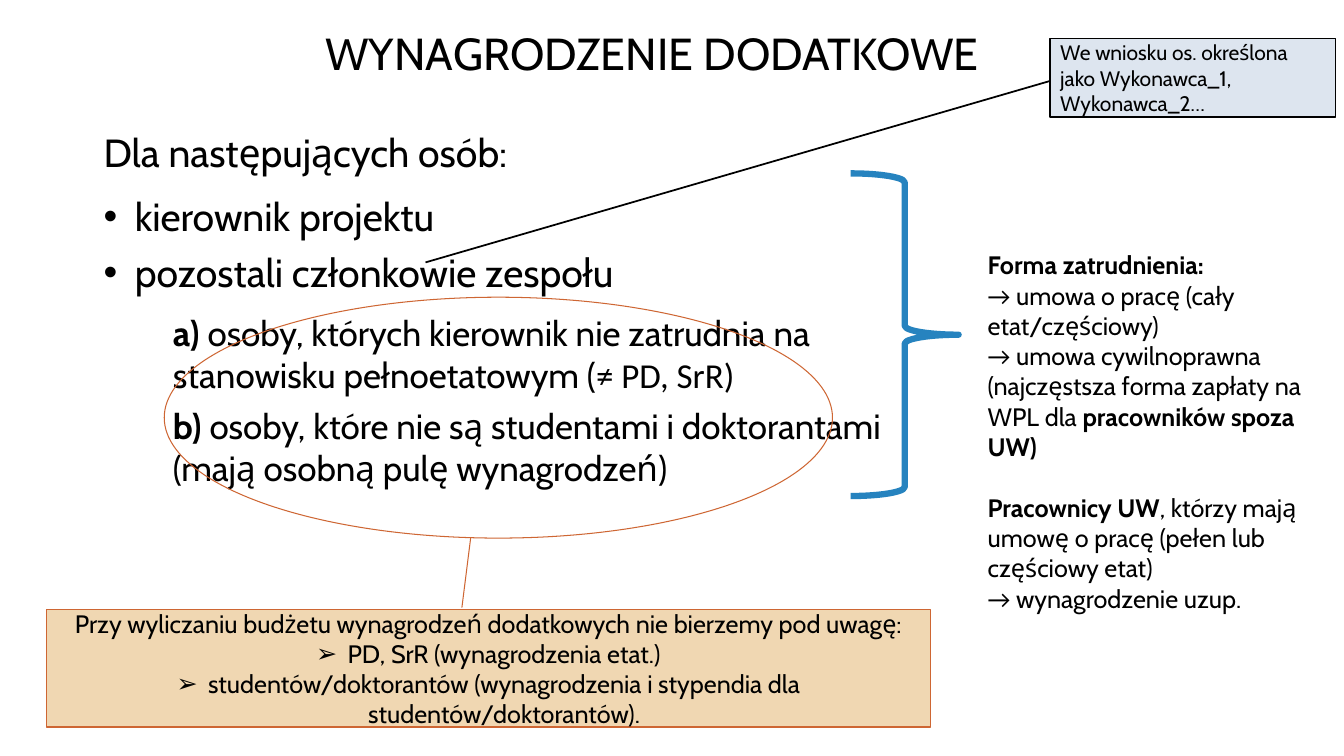
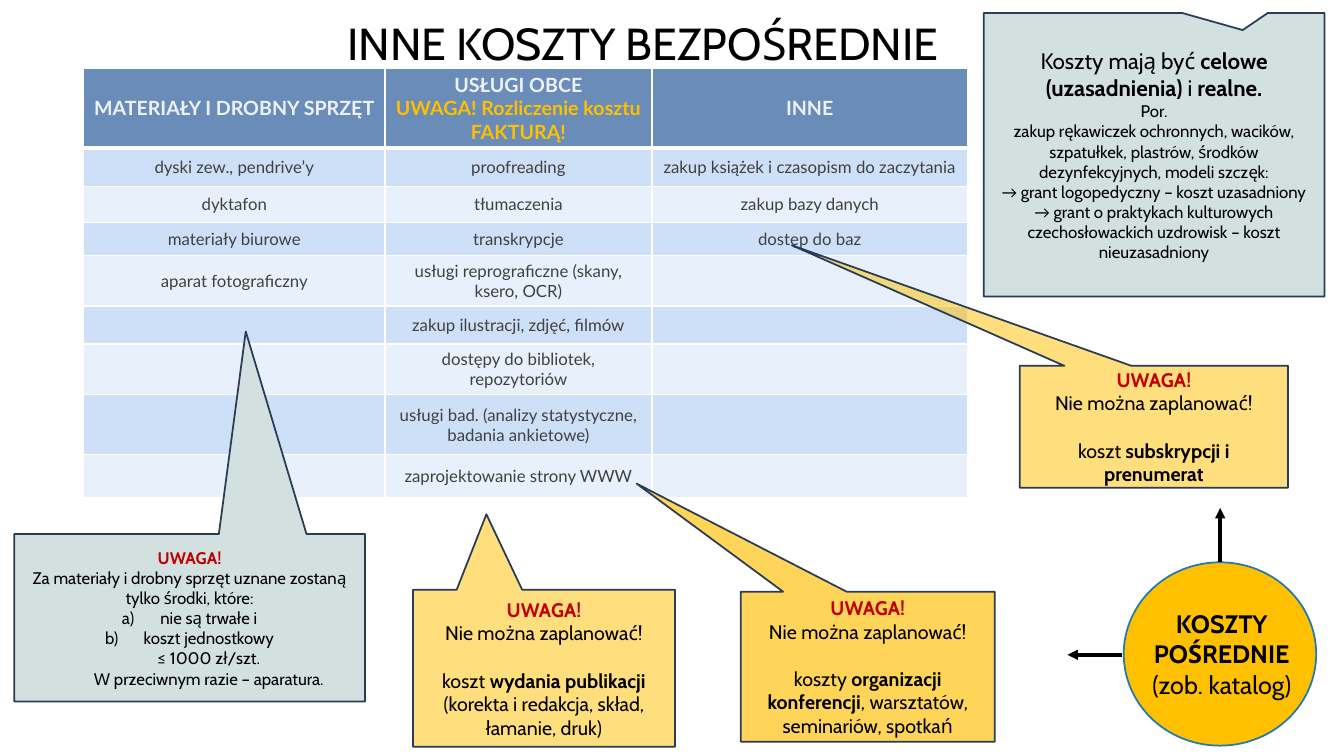
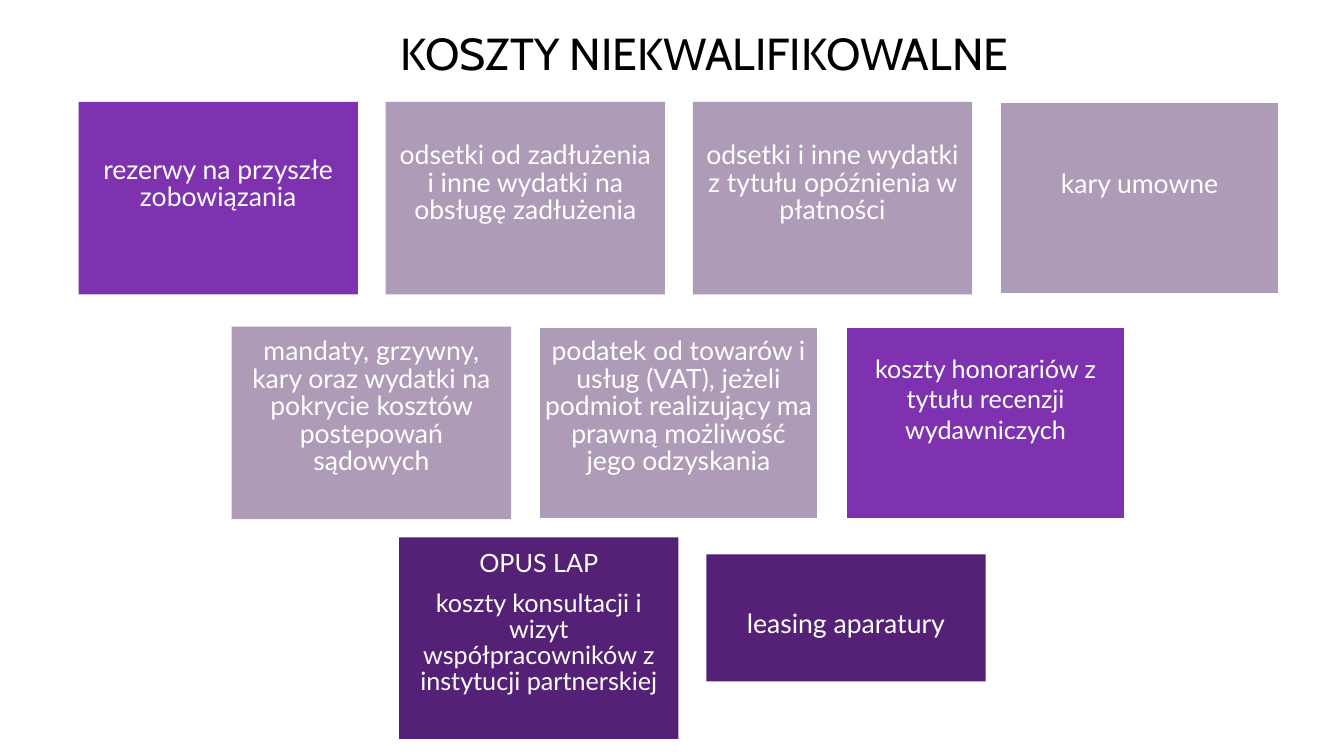
from dataclasses import dataclass

from lxml import etree
from pptx import Presentation
from pptx.dml.color import RGBColor
from pptx.enum.shapes import MSO_CONNECTOR, MSO_SHAPE
from pptx.enum.text import MSO_ANCHOR, PP_ALIGN
from pptx.oxml.ns import qn
from pptx.util import Cm, Pt

LEFT, CENTER = PP_ALIGN.LEFT, PP_ALIGN.CENTER
TOP, MIDDLE = MSO_ANCHOR.TOP, MSO_ANCHOR.MIDDLE
RECT, ELLIPSE, BRACE = MSO_SHAPE.RECTANGLE, MSO_SHAPE.OVAL, MSO_SHAPE.RIGHT_BRACE
LINE_CALLOUT, WEDGE = MSO_SHAPE.LINE_CALLOUT_1, MSO_SHAPE.RECTANGULAR_CALLOUT
STRAIGHT = MSO_CONNECTOR.STRAIGHT


@dataclass(frozen=True)
class Theme:
    body_font: str = "Cabin"
    table_font: str = "Lato"
    symbol_font: str = "Calibri"
    black: str = "000000"
    white: str = "FFFFFF"
    red: str = "C00000"
    gold: str = "FFC000"
    blue: str = "2683BF"
    rust: str = "CE6633"
    sand: str = "F0D7B2"
    ice: str = "DDE5EF"
    mist: str = "D2E0E0"
    navy: str = "283C55"
    circle_line: str = "2379B0"
    header: str = "698CB8"
    header_text: str = "EEF2F7"
    cell_text: str = "404040"
    bands: tuple = ("CDE0F8", "E8F0FC")
    violet: str = "7E32B0"
    lilac: str = "AD9BB7"
    plum: str = "542176"
    title: float = 32
    lead: float = 28
    sub: float = 25
    tile: float = 19
    text: float = 18
    tag: float = 15
    note: float = 14
    small: float = 12


THEME = Theme()


@dataclass
class Para:
    """Runs are plain strings or (text, flags); flags: bold, symbol, red, gold."""
    runs: list
    size: float = THEME.text
    align: object = LEFT
    color: str = THEME.black
    font: str = THEME.body_font
    before: float = 0
    after: float = 0
    spacing: float = 1
    indent: float = 0
    bullet: str = ""


# ---- Content: extra pay ----
PEOPLE = [
    Para(["Dla następujących osób:"], THEME.lead, after=12),
    Para(["kierownik projektu"], THEME.lead, indent=0.79, bullet="•"),
    Para(["pozostali członkowie zespołu"], THEME.lead, before=6, after=12,
         indent=0.79, bullet="•"),
    Para([("a) ", "bold"), "osoby, których kierownik nie zatrudnia na\n"
          "stanowisku pełnoetatowym (", ("≠ PD, SrR)", "symbol")],
         THEME.sub, indent=1.75),
    Para([("b) ", "bold"), "osoby, które nie są studentami i doktorantami\n"
          "(mają osobną pulę wynagrodzeń)"], THEME.sub, before=6, indent=1.75),
]
EMPLOYMENT = [
    Para([("Forma zatrudnienia:", "bold")]),
    Para([("→ ", "symbol"), "umowa o pracę (cały etat/częściowy)"]),
    Para([("→", "symbol"), " umowa cywilnoprawna\n(najczęstsza forma zapłaty na WPL dla ",
          ("pracowników spoza UW)", "bold")]),
    Para([("Pracownicy UW", "bold"),
          ", którzy mają umowę o pracę (pełen lub częściowy etat)"], before=22),
    Para([("→", "symbol"), " wynagrodzenie uzup."]),
]
CONTRACTORS = [Para(["We wniosku os. określona jako Wykonawca_1, Wykonawca_2…"], THEME.tag)]
EXCLUDED = [
    Para(["Przy wyliczaniu budżetu wynagrodzeń dodatkowych nie bierzemy pod uwagę:"],
         align=CENTER),
    Para(["PD, SrR (wynagrodzenia etat.)"], align=CENTER, indent=0.79, bullet="➢"),
    Para(["studentów/doktorantów (wynagrodzenia i stypendia dla studentów/doktorantów)."],
         align=CENTER, indent=0.79, bullet="➢"),
]

# ---- Content: other direct costs ----
HEADERS = [
    [["MATERIAŁY I DROBNY SPRZĘT"]],
    [["USŁUGI OBCE"], [("UWAGA! Rozliczenie kosztu FAKTURĄ!", "gold")]],
    [["INNE"]],
]
COST_ROWS = [
    ("dyski zew., pendrive’y", "proofreading", "zakup książek i czasopism do zaczytania"),
    ("dyktafon", "tłumaczenia", "zakup bazy danych"),
    ("materiały biurowe", "transkrypcje", "dostęp do baz"),
    ("aparat fotograficzny", "usługi reprograficzne (skany, ksero, OCR)", ""),
    ("", "zakup ilustracji, zdjęć, filmów", ""),
    ("", "dostępy do bibliotek, repozytoriów", ""),
    ("", "usługi bad. (analizy statystyczne, badania ankietowe)", ""),
    ("", "zaprojektowanie strony WWW", ""),
]
COLUMN_WIDTHS = (7.59, 6.73, 7.95)
ROW_HEIGHTS = (2.0, 0.96, 0.91, 0.84, 1.27, 0.96, 1.27, 1.52, 1.09)


def warning(size, *paras):
    return [Para([("UWAGA!", "bold red")], size, CENTER), *paras]


def not_plannable(*runs):
    return warning(THEME.note, Para(["Nie można zaplanować!"], THEME.note, CENTER),
                   Para(list(runs), THEME.note, CENTER, before=17))


EQUIPMENT = warning(
    THEME.small,
    Para(["Za materiały i drobny sprzęt uznane zostaną tylko środki, które:"],
         THEME.small, CENTER),
    Para(["nie są trwałe i"], THEME.small, CENTER, indent=0.97, bullet="a)"),
    Para(["koszt jednostkowy\n", ("≤ ", "symbol"),
          "1000 zł/szt.\nW przeciwnym razie – aparatura."],
         THEME.small, CENTER, indent=0.97, bullet="a)"),
)
PURPOSE = [
    Para(["Koszty mają być ", ("celowe (uzasadnienia)", "bold"), " i ", ("realne.", "bold")],
         16, CENTER),
    Para(["Por."], THEME.small, CENTER),
    Para(["zakup rękawiczek ochronnych, wacików, szpatułkek, plastrów, "
          "środków dezynfekcyjnych, modeli szczęk:"], THEME.small, CENTER),
    Para([("→ ", "symbol"), "grant logopedyczny – koszt uzasadniony"], THEME.small, CENTER),
    Para([("→ ", "symbol"), "grant o praktykach kulturowych czechosłowackich uzdrowisk"
          " – koszt nieuzasadniony"], THEME.small, CENTER),
]
# place, pointer, fill, opacity in percent, text
NOTES = [
    ((25.7, 9.22, 6.76, 3.07), (-1.35, -1.49), THEME.gold, 51,
     not_plannable("koszt ", ("subskrypcji i prenumerat", "bold"))),
    ((0.36, 13.46, 8.84, 4.22), (0.16, -1.71), THEME.mist, 100, EQUIPMENT),
    ((18.67, 14.91, 6.4, 3.78), (-0.91, -1.22), THEME.gold, 65,
     not_plannable("koszty ", ("organizacji konferencji", "bold"),
                   ", warsztatów, seminariów, spotkań")),
    ((10.41, 14.86, 6.6, 3.96), (-0.22, -0.98), THEME.gold, 51,
     not_plannable("koszt ", ("wydania publikacji ", "bold"),
                   "(korekta i redakcja, skład, łamanie, druk)")),
    ((24.79, 0.33, 8.59, 7.14), (0.26, -0.44), THEME.mist, 100, PURPOSE),
]
INDIRECT = [Para([("KOSZTY POŚREDNIE ", "bold"), "(zob. katalog)"], align=CENTER)]
INDIRECT_ARROWS = [((30.75, 14.15), (30.75, 12.8)), ((28.27, 16.5), (26.9, 16.5))]


# ---- Content: ineligible costs ----
@dataclass
class Tile:
    lines: list
    fill: str
    pad_top: float
    pad_side: float = 0.25
    outlined: bool = False
    size: float = THEME.tile
    spacing: float = 0.86
    drop: float = 0
    height: float = 4.85


TILE_WIDTH, TILE_PITCH = 7.04, 7.74
# left and top of the row, tiles
TILE_ROWS = [
    (1.98, 2.57, [
        Tile(["rezerwy na przyszłe zobowiązania"], THEME.violet, 1.39),
        Tile(["odsetki od zadłużenia i inne wydatki na obsługę zadłużenia"], THEME.lilac, 1.03),
        Tile(["odsetki i inne wydatki z tytułu opóźnienia w płatności"], THEME.lilac, 1.03),
        Tile(["kary umowne"], THEME.lilac, 1.76, outlined=True),
    ]),
    (5.84, 8.23, [
        Tile(["mandaty, grzywny, kary oraz wydatki na pokrycie kosztów postepowań sądowych"],
             THEME.lilac, 0.31, 0.4),
        Tile(["podatek od towarów i usług (VAT), jeżeli podmiot realizujący "
              "ma prawną możliwość jego odzyskania"], THEME.lilac, 0.31, 0.15, True),
        Tile(["koszty honorariów z tytułu recenzji wydawniczych"], THEME.violet, 0.68,
             outlined=True, size=THEME.text, spacing=1),
    ]),
    (10.06, 13.54, [
        Tile(["OPUS LAP",
              "koszty konsultacji i wizyt współpracowników z instytucji partnerskiej"],
             THEME.plum, 0.36, 0.4, size=THEME.text, height=5.08),
        Tile(["leasing aparatury"], THEME.plum, 1.45, drop=0.43, height=3.2),
    ]),
]


# ---- Text ----
def rgb(value):
    return RGBColor.from_string(value)


def add_bullet(para, mark):
    props = para._p.get_or_add_pPr()
    if mark == "a)":
        etree.SubElement(props, qn("a:buAutoNum"), type="alphaLcParenR")
    else:
        etree.SubElement(props, qn("a:buFont"), typeface="Arial")
        etree.SubElement(props, qn("a:buChar"), char=mark)


def add_span(para, item, run):
    text, flags = (run, "") if isinstance(run, str) else run
    for number, line in enumerate(text.split("\n")):
        if number:
            para.add_line_break()
        if not line:
            continue
        span = para.add_run()
        span.text = line
        span.font.size = Pt(item.size)
        span.font.name = THEME.symbol_font if "symbol" in flags else item.font
        span.font.bold = "bold" in flags
        color = THEME.red if "red" in flags else THEME.gold if "gold" in flags else item.color
        span.font.color.rgb = rgb(color)


def write(frame, items):
    frame.word_wrap = True
    for number, item in enumerate(items):
        para = frame.add_paragraph() if number else frame.paragraphs[0]
        if item.indent:
            props = para._p.get_or_add_pPr()
            props.set("marL", str(Cm(item.indent)))
            props.set("indent", str(-Cm(item.indent) if item.bullet else 0))
        if item.bullet:
            add_bullet(para, item.bullet)
        para.alignment = item.align
        para.line_spacing = item.spacing
        if item.before:
            para.space_before = Pt(item.before)
        if item.after:
            para.space_after = Pt(item.after)
        for run in item.runs:
            add_span(para, item, run)


# ---- Objects ----
def add_text(page, place, items, anchor=TOP):
    box = page.shapes.add_textbox(*map(Cm, place))
    box.text_frame.vertical_anchor = anchor
    write(box.text_frame, items)


def add_title(page, text, center, top=0.38):
    width = 26
    add_text(page, (center - width / 2, top, width, 1.88),
             [Para([text], THEME.title, CENTER)], MIDDLE)


def add_figure(page, kind, place, fill=None, line=None, items=(), adjust=(), opacity=100):
    """line is (colour, width in points)."""
    figure = page.shapes.add_shape(kind, *map(Cm, place))
    figure.shadow.inherit = False
    for number, value in enumerate(adjust):
        figure.adjustments[number] = value
    if fill:
        figure.fill.solid()
        figure.fill.fore_color.rgb = rgb(fill)
        if opacity < 100:
            color = figure.fill._xPr.find(qn("a:solidFill"))[0]
            etree.SubElement(color, qn("a:alpha"), val=str(opacity * 1000))
    else:
        figure.fill.background()
    if line:
        figure.line.color.rgb = rgb(line[0])
        figure.line.width = Pt(line[1])
    else:
        figure.line.fill.background()
    figure.text_frame.vertical_anchor = MIDDLE
    write(figure.text_frame, items)
    return figure


def add_arrow(page, start, end):
    arrow = page.shapes.add_connector(STRAIGHT, *map(Cm, start + end))
    arrow.line.color.rgb = rgb(THEME.black)
    arrow.line.width = Pt(2.5)
    etree.SubElement(arrow.line._get_or_add_ln(), qn("a:tailEnd"), type="triangle")
    etree.SubElement(arrow._element.spPr, qn("a:effectLst"))


def set_borders(cell, bottom):
    props = cell._tc.get_or_add_tcPr()
    for number, (side, width) in enumerate(
            [("lnL", 1), ("lnR", 1), ("lnT", 1), ("lnB", bottom)]):
        border = etree.Element(qn("a:" + side), w=str(Pt(width)))
        fill = etree.SubElement(border, qn("a:solidFill"))
        etree.SubElement(fill, qn("a:srgbClr"), val=THEME.white)
        props.insert(number, border)


def add_cost_table(page, left, top):
    size = (sum(COLUMN_WIDTHS), sum(ROW_HEIGHTS))
    table = page.shapes.add_table(len(ROW_HEIGHTS), len(COLUMN_WIDTHS),
                                  *map(Cm, (left, top) + size)).table
    for column, width in zip(table.columns, COLUMN_WIDTHS):
        column.width = Cm(width)
    for row, height in zip(table.rows, ROW_HEIGHTS):
        row.height = Cm(height)
    heads = [[Para([(run, "bold") if isinstance(run, str) else (run[0], "bold " + run[1])
                    for run in runs], THEME.note, CENTER, THEME.header_text, THEME.table_font)
              for runs in paras] for paras in HEADERS]
    body = [[[Para([text], THEME.small, CENTER, THEME.cell_text, THEME.table_font)]
             for text in row] for row in COST_ROWS]
    for row, contents in enumerate([heads] + body):
        for column, items in enumerate(contents):
            cell = table.cell(row, column)
            cell.fill.solid()
            cell.fill.fore_color.rgb = rgb(THEME.bands[(row - 1) % 2] if row else THEME.header)
            cell.vertical_anchor = MIDDLE
            cell.margin_top = cell.margin_bottom = 0
            set_borders(cell, 1 if row else 3)
            write(cell.text_frame, items)


# ---- Slides ----
def build_extra_pay(page):
    add_title(page, "WYNAGRODZENIE DODATKOWE", 16.44)
    add_text(page, (2.36, 3.12, 28.5, 11.53), PEOPLE)
    add_text(page, (24.64, 6.17, 8.48, 11.79), EMPLOYMENT)
    add_figure(page, BRACE, (21.44, 4.37, 2.72, 8.13), line=(THEME.blue, 4.5))
    add_figure(page, LINE_CALLOUT, (26.47, 0.97, 7.19, 1.98), THEME.ice, (THEME.black, 1.25),
               CONTRACTORS, (0.54, 0, 2.85, -2.19))
    add_figure(page, LINE_CALLOUT, (1.17, 15.37, 22.28, 2.95), THEME.sand, (THEME.rust, 0.75),
               EXCLUDED, (-0.02, 0.47, -0.62, 0.48))
    add_figure(page, ELLIPSE, (4.14, 7.49, 16.84, 6.07), line=(THEME.rust, 0.75))


def build_direct_costs(page):
    add_title(page, "INNE KOSZTY BEZPOŚREDNIE", 16.21, 0.14)
    add_cost_table(page, 2.11, 1.73)
    for place, pointer, fill, opacity, items in NOTES:
        add_figure(page, WEDGE, place, fill, (THEME.navy, 1.25), items, pointer, opacity)
    add_figure(page, ELLIPSE, (28.32, 14.17, 4.85, 4.62), THEME.gold, (THEME.circle_line, 1.25))
    add_text(page, (28.4, 15.21, 4.78, 2.57), INDIRECT)
    for start, end in INDIRECT_ARROWS:
        add_arrow(page, start, end)


def build_ineligible_costs(page):
    add_title(page, "KOSZTY NIEKWALIFIKOWALNE", 17.76)
    for left, top, tiles in TILE_ROWS:
        for column, tile in enumerate(tiles):
            items = [Para([text], tile.size, CENTER, THEME.white, THEME.table_font,
                          before=10 if number else 0, spacing=tile.spacing)
                     for number, text in enumerate(tile.lines)]
            place = (left + column * TILE_PITCH, top + tile.drop, TILE_WIDTH, tile.height)
            line = (THEME.white, 1.5) if tile.outlined else None
            frame = add_figure(page, RECT, place, tile.fill, line, items).text_frame
            frame.vertical_anchor = TOP
            frame.margin_top, frame.margin_bottom = Cm(tile.pad_top), 0
            frame.margin_left = frame.margin_right = Cm(tile.pad_side)


def main():
    deck = Presentation()
    deck.slide_width, deck.slide_height = Cm(33.87), Cm(19.05)
    blank = deck.slide_layouts[6]
    for build in (build_extra_pay, build_direct_costs, build_ineligible_costs):
        build(deck.slides.add_slide(blank))
    deck.save("out.pptx")


if __name__ == "__main__":
    main()
